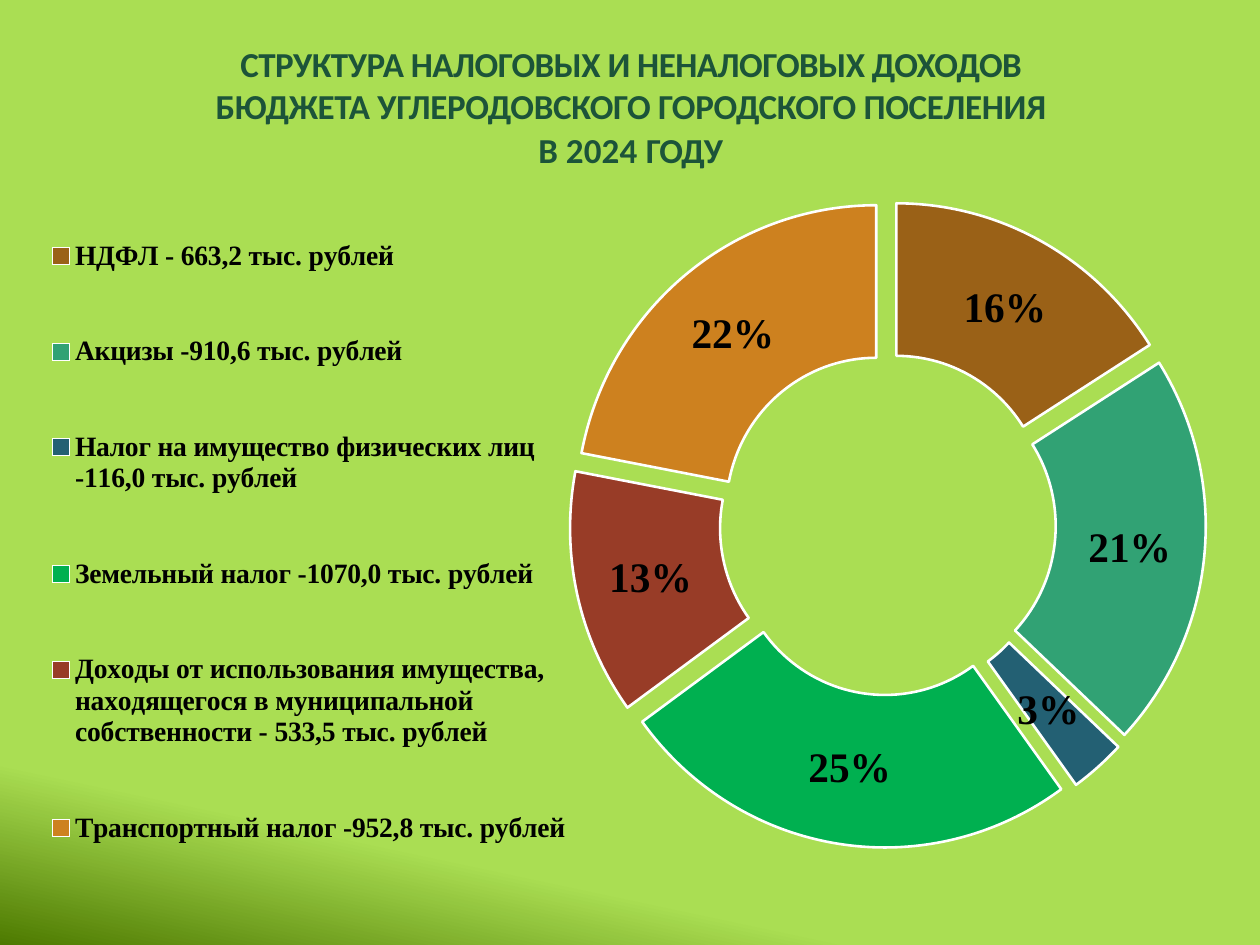
from dataclasses import dataclass

import pptx
import pptx.chart.data
import pptx.dml.color
import pptx.enum.chart
import pptx.enum.text
import pptx.oxml
import pptx.oxml.ns
import pptx.util
from pptx.util import Inches

qn = pptx.oxml.ns.qn


def rgb(value):
    return pptx.dml.color.RGBColor.from_string(value)


@dataclass(frozen=True)
class Theme:
    meadow: str = "ACDF55"
    moss: str = "4C7800"
    veil: str = "84C823"
    heading: str = "19513A"
    label: str = "000000"
    border: str = "FFFFFF"
    heading_font: str = "Calibri"
    chart_font: str = "Quicksand"
    label_font: str = "Times New Roman"
    heading_size: int = 20
    chart_size: int = 10
    legend_size: int = 16
    percent_size: int = 24


THEME = Theme()

HEADING = [
    [("СТРУКТУРА НАЛОГОВЫХ И НЕНАЛОГОВЫХ ДОХОДОВ ", -30),
     ("БЮДЖЕТА УГЛЕРОДОВСКОГО ГОРОДСКОГО ПОСЕЛЕНИЯ", -20)],
    [("В ", 0), ("2024 ", 10), ("ГОДУ", -40)],
]

REVENUES = [
    ("НДФЛ - 663,2 тыс. рублей", 16, "9A6117"),
    ("Акцизы -910,6 тыс. рублей", 21, "31A274"),
    ("Налог на имущество физических лиц -116,0 тыс. рублей", 3, "236073"),
    ("Земельный налог -1070,0 тыс. рублей", 25, "00B050"),
    ("Доходы от использования имущества, находящегося в муниципальной "
     "собственности - 533,5 тыс. рублей", 13, "983C27"),
    ("Транспортный налог -952,8 тыс. рублей", 22, "CD811F"),
]


def style_font(font, name, size, color, bold):
    font.name = name
    font.size = pptx.util.Pt(size)
    font.bold = bold
    font.color.rgb = rgb(color)


def chart_element(tag, value):
    element = pptx.oxml.parse_xml(
        f'<c:{tag} xmlns:c="http://schemas.openxmlformats.org/drawingml/2006/chart"/>')
    element.set("val", str(value))
    return element


def set_layout(parent, index, x, y, w, h, inner=False):
    for old in parent.findall(qn("c:layout")):
        parent.remove(old)
    layout = pptx.oxml.parse_xml(
        '<c:layout xmlns:c="http://schemas.openxmlformats.org/drawingml/2006/chart">'
        '<c:manualLayout/></c:layout>')
    settings = [("layoutTarget", "inner")] if inner else []
    settings += [("xMode", "edge"), ("yMode", "edge"),
                 ("x", x), ("y", y), ("w", w), ("h", h)]
    for tag, value in settings:
        layout[0].append(chart_element(tag, value))
    parent.insert(index, layout)


def paint_background(slide, left, top, width, height):
    fill = slide.background.fill
    fill.gradient()
    fill.gradient_angle = 360 - 102
    stops = [(0.85, THEME.meadow), (1, THEME.moss)]
    for stop, (position, color) in zip(fill.gradient_stops, stops):
        stop.position = position
        stop.color.rgb = rgb(color)
    veil = slide.shapes.add_shape(
        pptx.enum.shapes.MSO_SHAPE.RECTANGLE, left, top, width, height)
    veil.shadow.inherit = False
    veil.line.fill.background()
    veil.fill.solid()
    veil.fill.fore_color.rgb = rgb(THEME.veil)
    color = veil.fill._xPr.find(qn("a:solidFill"))[0]
    color.append(pptx.oxml.parse_xml(
        '<a:alpha xmlns:a="http://schemas.openxmlformats.org/drawingml/2006/main" '
        'val="3000"/>'))


def place_heading(slide, left, top, width, height):
    heading = slide.shapes.title
    heading.left, heading.top = left, top
    heading.width, heading.height = width, height
    frame = heading.text_frame
    frame.word_wrap = True
    frame.auto_size = pptx.enum.text.MSO_AUTO_SIZE.NONE
    frame.vertical_anchor = pptx.enum.text.MSO_ANCHOR.TOP
    frame.margin_left = frame.margin_right = frame.margin_bottom = 0
    frame.margin_top = Inches(0.01)
    for index, pieces in enumerate(HEADING):
        paragraph = frame.add_paragraph() if index else frame.paragraphs[0]
        paragraph.alignment = pptx.enum.text.PP_ALIGN.CENTER
        paragraph.line_spacing = 1.0
        paragraph.space_before = pptx.util.Pt(1 if index else 0)
        for text, spacing in pieces:
            run = paragraph.add_run()
            run.text = text
            style_font(run.font, THEME.heading_font, THEME.heading_size,
                       THEME.heading, True)
            run.font._element.set("spc", str(spacing))


def place_revenue_chart(slide, left, top, width, height):
    data = pptx.chart.data.CategoryChartData()
    data.categories = [name for name, _, _ in REVENUES]
    data.add_series("Series 1", [share for _, share, _ in REVENUES])
    chart = slide.shapes.add_chart(
        pptx.enum.chart.XL_CHART_TYPE.DOUGHNUT_EXPLODED,
        left, top, width, height, data).chart
    chart.has_title = False
    style_font(chart.font, THEME.chart_font, THEME.chart_size, THEME.border, False)

    chart.has_legend = True
    legend = chart.legend
    legend.position = pptx.enum.chart.XL_LEGEND_POSITION.BOTTOM
    legend.include_in_layout = False
    style_font(legend.font, THEME.label_font, THEME.legend_size, THEME.label, True)
    set_layout(legend._element, 1, 0.01, 0, 0.46, 1)

    plot = chart.plots[0]
    plot.vary_by_categories = True
    ring = plot._element
    set_layout(ring.getparent(), 0, 0.481, 0.029, 0.519, 0.893, inner=True)
    ring.find(qn("c:holeSize")).set("val", "61")

    revenue = plot.series[0]
    for old in revenue._element.findall(qn("c:explosion")):
        revenue._element.remove(old)
    for index, (_, _, color) in enumerate(REVENUES):
        slice_format = revenue.points[index].format
        slice_format.fill.solid()
        slice_format.fill.fore_color.rgb = rgb(color)
        slice_format.line.color.rgb = rgb(THEME.border)
        slice_format.line.width = pptx.util.Pt(1.5)
    for point in revenue._element.findall(qn("c:dPt")):
        point.find(qn("c:spPr")).addprevious(chart_element("explosion", 12))

    labels = revenue.data_labels
    labels.show_percentage = True
    labels.show_value = False
    labels.number_format = "0%"
    labels.number_format_is_linked = False
    style_font(labels.font, THEME.label_font, THEME.percent_size, THEME.label, True)


def main():
    deck = pptx.Presentation()
    deck.slide_width, deck.slide_height = Inches(10), Inches(7.5)
    slide = deck.slides.add_slide(deck.slide_layouts[5])
    paint_background(slide, 0, 0, deck.slide_width, deck.slide_height)
    place_heading(slide, Inches(1.37), Inches(0.33), Inches(7.27), Inches(1.04))
    place_revenue_chart(slide, Inches(0.25), Inches(1.4), Inches(9.33), Inches(5.81))
    deck.save("out.pptx")


if __name__ == "__main__":
    main()
